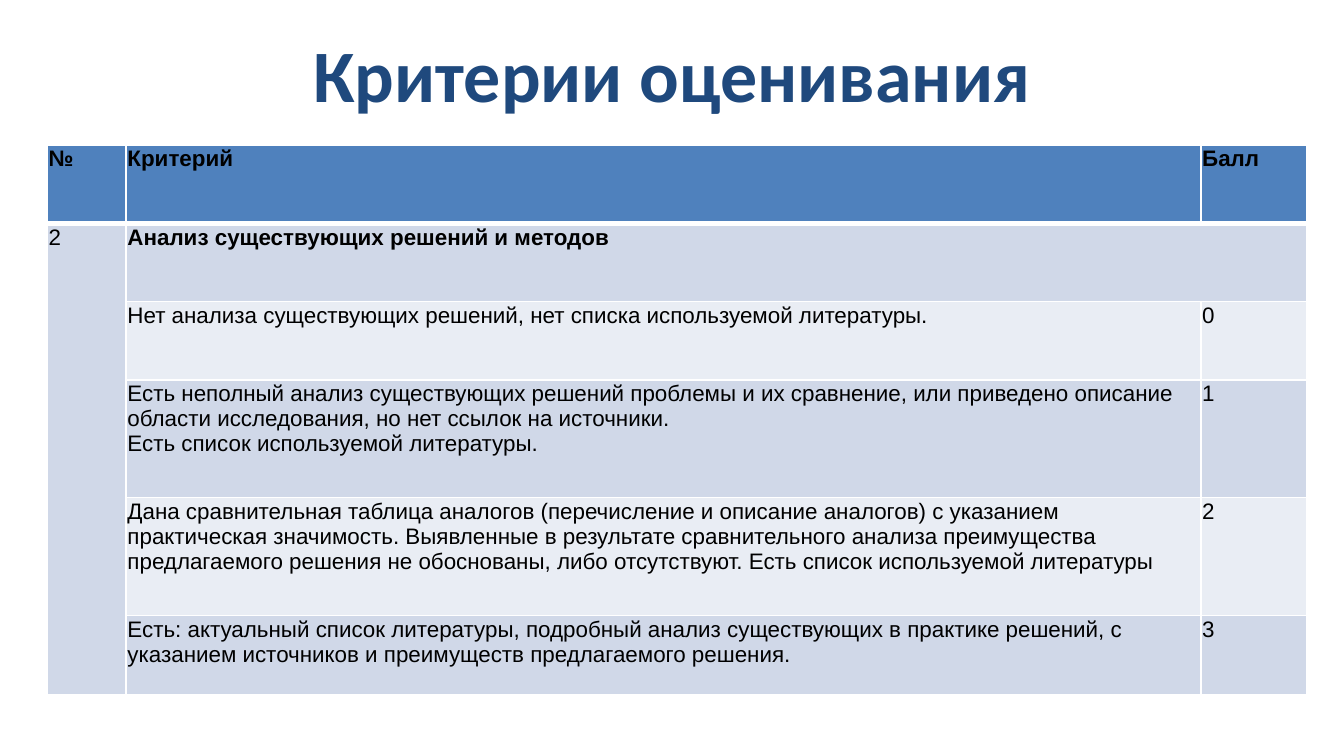
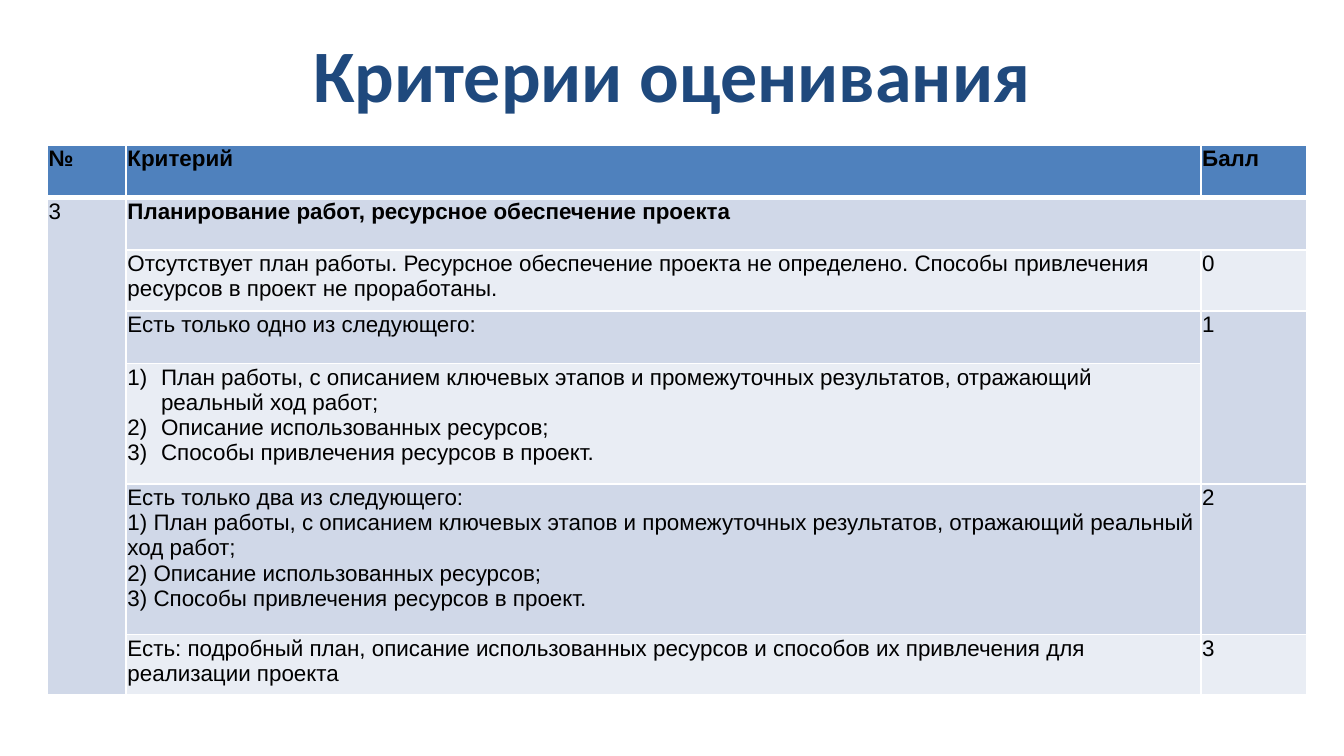
"""Builds two slides of project assessment criteria, each with one scored table."""
from collections import namedtuple

from lxml import etree
from pptx import Presentation
from pptx.dml.color import RGBColor
from pptx.enum import text as t
from pptx.oxml import ns
from pptx.util import Pt

NAVY = RGBColor(0x1F, 0x49, 0x7D)
HEADER_BLUE = RGBColor(0x4F, 0x81, 0xBD)
BANDS = (RGBColor(0xE9, 0xED, 0xF4), RGBColor(0xD0, 0xD8, 0xE8))
BLACK = RGBColor(0, 0, 0)
WHITE = RGBColor(0xFF, 0xFF, 0xFF)

TITLE = "Критерии оценивания"
HEADINGS = ("№", "Критерий", "Балл")
COLUMN_WIDTHS = (42.2, 575.8, 56.7)
TITLE_BOX = (36, 16.6, 648, 44.6)
TABLE_LEFT, TABLE_TOP = 25.4, 77.8
THIN, THICK = 1, 3

Level = namedtuple("Level", "height lines score numbered", defaults=(None, False))
Criterion = namedtuple("Criterion", "number name heading_height levels")

CRITERIA = [
    Criterion("2", "Анализ существующих решений и методов", 41.9, [
        Level(41.9, ["Нет анализа существующих решений, нет списка используемой литературы."], "0"),
        Level(63.1, ["Есть неполный анализ существующих решений проблемы и их сравнение, или приведено "
                     "описание области исследования, но нет ссылок на источники.",
                     "Есть список используемой литературы."], "1"),
        Level(63.1, ["Дана сравнительная таблица аналогов (перечисление и описание аналогов) с указанием "
                     "практическая значимость. Выявленные в результате сравнительного анализа преимущества "
                     "предлагаемого решения не обоснованы, либо отсутствуют. Есть список используемой "
                     "литературы"], "2"),
        Level(42.5, ["Есть: актуальный список литературы, подробный анализ существующих в практике решений, "
                     "с указанием источников и преимуществ предлагаемого решения."], "3"),
    ]),
    Criterion("3", "Планирование работ, ресурсное обеспечение проекта", 28.1, [
        Level(32.6, ["Отсутствует план работы. Ресурсное обеспечение проекта не определено. Способы "
                     "привлечения ресурсов в проект не проработаны."], "0"),
        Level(28.1, ["Есть только одно из следующего:"], "1"),
        Level(64.7, ["План работы, с описанием ключевых этапов и промежуточных результатов, отражающий "
                     "реальный ход работ;",
                     "Описание использованных ресурсов;",
                     "Способы привлечения ресурсов в проект."], numbered=True),
        Level(80.5, ["Есть только два из следующего:",
                     "1) План работы, с описанием ключевых этапов и промежуточных результатов, отражающий "
                     "реальный ход работ;",
                     "2) Описание использованных ресурсов;",
                     "3) Способы привлечения ресурсов в проект."], "2"),
        Level(32.4, ["Есть: подробный план, описание использованных ресурсов и способов их привлечения "
                     "для реализации проекта"], "3"),
    ]),
]


def write(frame, lines, size=12, font="Arial", color=BLACK, bold=False,
          align=t.PP_ALIGN.LEFT, numbered=False):
    """Fill a text frame with one paragraph per line."""
    for index, line in enumerate(lines):
        paragraph = frame.add_paragraph() if index else frame.paragraphs[0]
        paragraph.alignment = align
        if numbered:
            properties = paragraph._p.get_or_add_pPr()
            properties.set("marL", str(Pt(18)))
            properties.set("indent", str(-Pt(18)))
            etree.SubElement(properties, ns.qn("a:buAutoNum"), type="arabicParenR")
        run = paragraph.add_run()
        run.text = line
        run.font.size, run.font.name, run.font.bold = Pt(size), font, bold
        run.font.color.rgb = color


def style_cell(cell, row):
    """Apply margins, white borders and the band fill of a row."""
    cell.margin_left = cell.margin_right = cell.margin_top = Pt(0.72)
    cell.margin_bottom = 0
    widths = {"L": THIN, "R": THIN,
              "T": THICK if row == 1 else THIN,
              "B": THICK if row == 0 else THIN}
    properties = cell._tc.get_or_add_tcPr()
    for side, width in widths.items():
        line = etree.SubElement(properties, ns.qn(f"a:ln{side}"), w=str(Pt(width)))
        solid = etree.SubElement(line, ns.qn("a:solidFill"))
        etree.SubElement(solid, ns.qn("a:srgbClr"), val=str(WHITE))
    cell.fill.solid()
    cell.fill.fore_color.rgb = BANDS[row % 2] if row else HEADER_BLUE


def add_title(slide):
    """Place the shared title."""
    title = slide.shapes.title
    title.left, title.top, title.width, title.height = map(Pt, TITLE_BOX)
    frame = title.text_frame
    frame.auto_size = t.MSO_AUTO_SIZE.NONE
    frame.vertical_anchor = t.MSO_ANCHOR.MIDDLE
    write(frame, [TITLE], size=39.6, font="Calibri", color=NAVY, bold=True,
          align=t.PP_ALIGN.CENTER)


def add_criterion_table(slide, criterion):
    """Add the table of one criterion with its score levels."""
    heights = [criterion.heading_height] * 2 + [level.height for level in criterion.levels]
    table = slide.shapes.add_table(
        len(heights), len(HEADINGS), Pt(TABLE_LEFT), Pt(TABLE_TOP),
        Pt(sum(COLUMN_WIDTHS)), Pt(sum(heights))).table
    table.first_row = table.horz_banding = False
    for column, width in zip(table.columns, COLUMN_WIDTHS):
        column.width = Pt(width)
    for row, height in enumerate(heights):
        table.rows[row].height = Pt(height)
        for column in range(len(HEADINGS)):
            style_cell(table.cell(row, column), row)

    for column, heading in enumerate(HEADINGS):
        write(table.cell(0, column).text_frame, [heading], bold=True)
    table.cell(1, 0).merge(table.cell(len(heights) - 1, 0))
    write(table.cell(1, 0).text_frame, [criterion.number])
    table.cell(1, 1).merge(table.cell(1, 2))
    write(table.cell(1, 1).text_frame, [criterion.name], bold=True)
    for row, level in enumerate(criterion.levels, start=2):
        write(table.cell(row, 1).text_frame, level.lines, numbered=level.numbered)
        if level.score is None:
            table.cell(row - 1, 2).merge(table.cell(row, 2))
        else:
            write(table.cell(row, 2).text_frame, [level.score])


def main():
    """Build and save the presentation."""
    deck = Presentation()
    deck.slide_width, deck.slide_height = Pt(720), Pt(405)
    title_only = deck.slide_layouts[5]
    for criterion in CRITERIA:
        slide = deck.slides.add_slide(title_only)
        add_title(slide)
        add_criterion_table(slide, criterion)
    deck.save("out.pptx")


if __name__ == "__main__":
    main()
